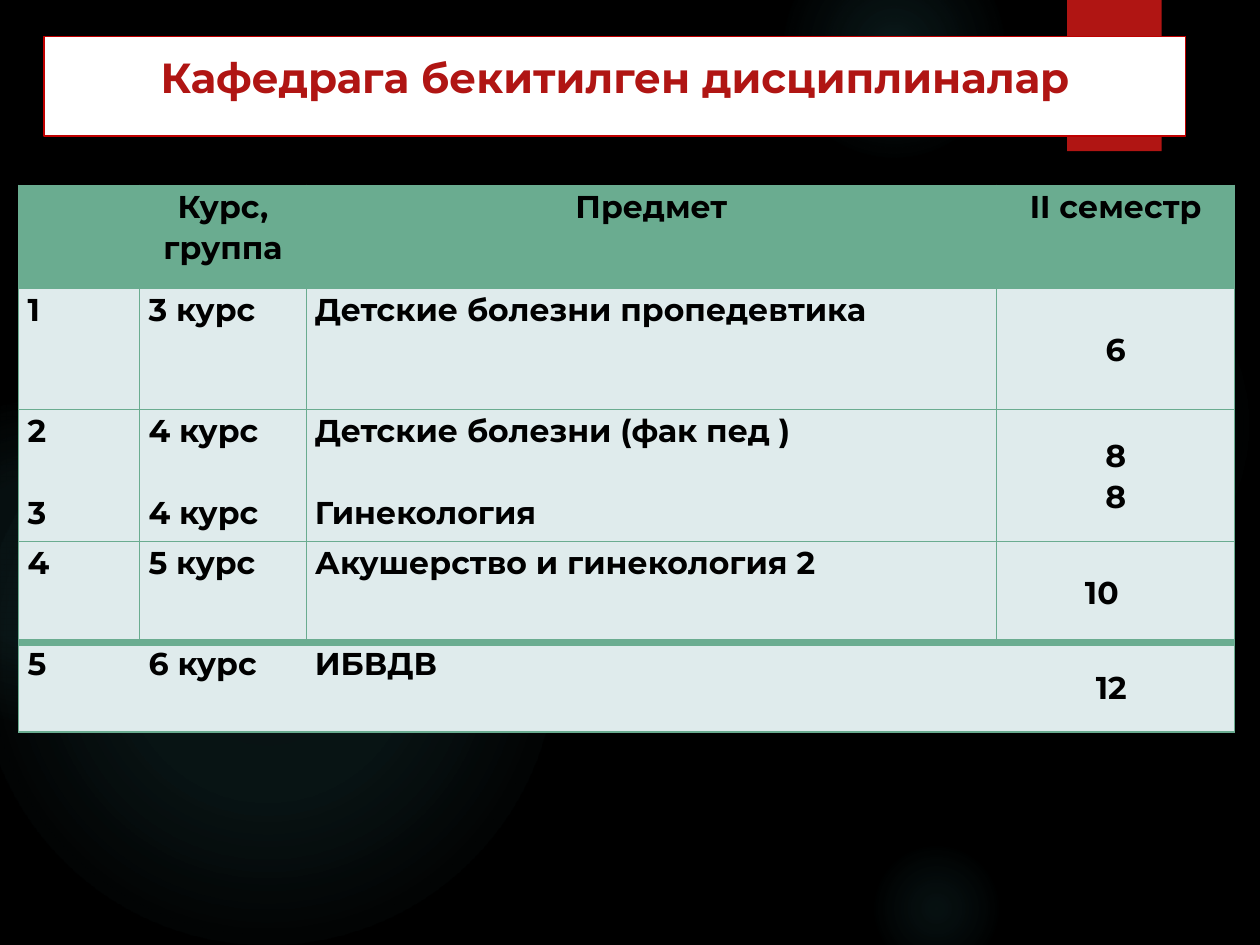
from lxml import etree
from pptx import Presentation
from pptx.dml.color import RGBColor
from pptx.enum.shapes import MSO_SHAPE
from pptx.enum.text import MSO_ANCHOR, PP_ALIGN
from pptx.oxml import parse_xml
from pptx.util import Inches, Pt

OVAL, RECT = MSO_SHAPE.OVAL, MSO_SHAPE.RECTANGLE
LEFT, CENTER = PP_ALIGN.LEFT, PP_ALIGN.CENTER
TOP, MIDDLE = MSO_ANCHOR.TOP, MSO_ANCHOR.MIDDLE
GREEN, PALE, RED, GLOW = "6AAC90", "DFEBEC", "B01513", "50B9C1"
NS = "http://schemas.openxmlformats.org/drawingml/2006/main"


def rgb(color):
    return RGBColor.from_string(color)


def write(tf, text, size=18, color="000000", align=LEFT, spacing=1.07, gap=0):
    """Fill a text frame, one paragraph per line; gap is set before later ones."""
    for i, line in enumerate(text.split("\n")):
        p = tf.add_paragraph() if i else tf.paragraphs[0]
        p.alignment, p.line_spacing = align, spacing
        p.space_before = Pt(gap if i else 0)
        r = p.add_run()
        r.text = line
        r.font.name, r.font.size, r.font.bold = "Montserrat", Pt(size), True
        r.font.color.rgb = rgb(color)


prs = Presentation()
prs.slide_width, prs.slide_height = Inches(10), Inches(7.5)
s = prs.slides.add_slide(prs.slide_layouts[6])
s.background.fill.solid()
s.background.fill.fore_color.rgb = rgb("000000")

# Soft glows: left, top, diameter, then (position, opacity) stops in percent
glows = [
    (6.89, 1.83, 3.08, [(0, 7), (36, 6), (69, 0)]),
    (6.22, -0.5, 1.75, [(0, 14), (36, 7), (73, 0)]),
    (6.89, 6.67, 1.08, [(0, 9), (36, 5), (66, 0)]),
    (-0.17, 2.92, 4.58, [(0, 11), (36, 10), (75, 0)]),
    (-0.92, 3.17, 2.58, [(0, 8), (36, 8), (72, 0)]),
]
for x, y, d, stops in glows:
    sp = s.shapes.add_shape(OVAL, Inches(x), Inches(y), Inches(d), Inches(d))
    sp.shadow.inherit = False
    sp.line.fill.background()
    gs = "".join(
        f'<a:gs pos="{pos * 1000}"><a:srgbClr val="{GLOW}">'
        f'<a:alpha val="{alpha * 1000}"/></a:srgbClr></a:gs>'
        for pos, alpha in stops)
    sp.element.spPr.find(f"{{{NS}}}prstGeom").addnext(parse_xml(
        f'<a:gradFill xmlns:a="{NS}"><a:gsLst>{gs}</a:gsLst><a:path path="circle">'
        '<a:fillToRect l="50000" t="50000" r="50000" b="50000"/></a:path></a:gradFill>'))

# Red ribbon and title box
for x, y, w, h, fill, line in [(8.47, 0, 0.75, 1.2, RED, None),
                               (0.35, 0.29, 9.06, 0.79, "FFFFFF", "C00000")]:
    sp = s.shapes.add_shape(RECT, Inches(x), Inches(y), Inches(w), Inches(h))
    sp.shadow.inherit = False
    sp.fill.solid()
    sp.fill.fore_color.rgb = rgb(fill)
    if line:
        sp.line.color.rgb, sp.line.width = rgb(line), Pt(0.75)
    else:
        sp.line.fill.background()
tf = sp.text_frame
tf.word_wrap, tf.vertical_anchor, tf.margin_top = True, TOP, Inches(0.12)
write(tf, "Кафедрага бекитилген дисциплиналар", size=24, color=RED,
      align=CENTER, spacing=1)

# Table of disciplines
rows = [
    ["", "Курс, группа", "Предмет", "II cеместр"],
    ["1", "3 курс", "Детские болезни пропедевтика", "6"],
    ["2\n3", "4 курс\n4 курс", "Детские болезни (фак пед )\nГинекология", "8\n8"],
    ["4", "5 курс", "Акушерство и гинекология 2", "10"],
    ["5", "6 курс", "ИБВДВ", "12"],
]
col_widths = [0.96, 1.32, 5.48, 1.89]
row_heights = [0.82, 0.96, 1.05, 0.8, 0.71]
hours_shift = {3: 0.22, 4: 0.07}  # extra right margin in the last column
last_row, last_col = len(rows) - 1, len(col_widths) - 1

table = s.shapes.add_table(len(rows), len(col_widths), Inches(0.15), Inches(1.47),
                           Inches(sum(col_widths)), Inches(sum(row_heights))).table
for col, width in zip(table.columns, col_widths):
    col.width = Inches(width)
for row, height in zip(table.rows, row_heights):
    row.height = Inches(height)

for i, texts in enumerate(rows):
    for j, text in enumerate(texts):
        cell = table.cell(i, j)
        hours = i > 0 and j == last_col
        cell.margin_top = cell.margin_bottom = 0
        cell.margin_left = Inches(0.07)
        cell.margin_right = Inches(0.07 + (hours_shift.get(i, 0) if hours else 0))
        cell.vertical_anchor = MIDDLE if hours else TOP
        write(cell.text_frame, text, align=CENTER if i == 0 or hours else LEFT,
              gap=0 if hours else 23.4)

        # Borders: thick rule above the last row, no inner verticals within it
        widths = {"lnL": 0.75, "lnR": 0.75, "lnT": 0.75, "lnB": 0.75}
        if i == last_row:
            widths["lnT"] = 4
            widths["lnL"] = 0.75 if j == 0 else 0
            widths["lnR"] = 0.75 if j == last_col else 0
        elif i == last_row - 1:
            widths["lnB"] = 4
        tcPr = cell._tc.get_or_add_tcPr()
        for tag, width in widths.items():
            ln = etree.SubElement(tcPr, f"{{{NS}}}{tag}", w=str(Pt(width)))
            if width:
                fill = etree.SubElement(ln, f"{{{NS}}}solidFill")
                etree.SubElement(fill, f"{{{NS}}}srgbClr", val=GREEN)
            else:
                etree.SubElement(ln, f"{{{NS}}}noFill")
        cell.fill.solid()
        cell.fill.fore_color.rgb = rgb(PALE if i else GREEN)

prs.save("out.pptx")
